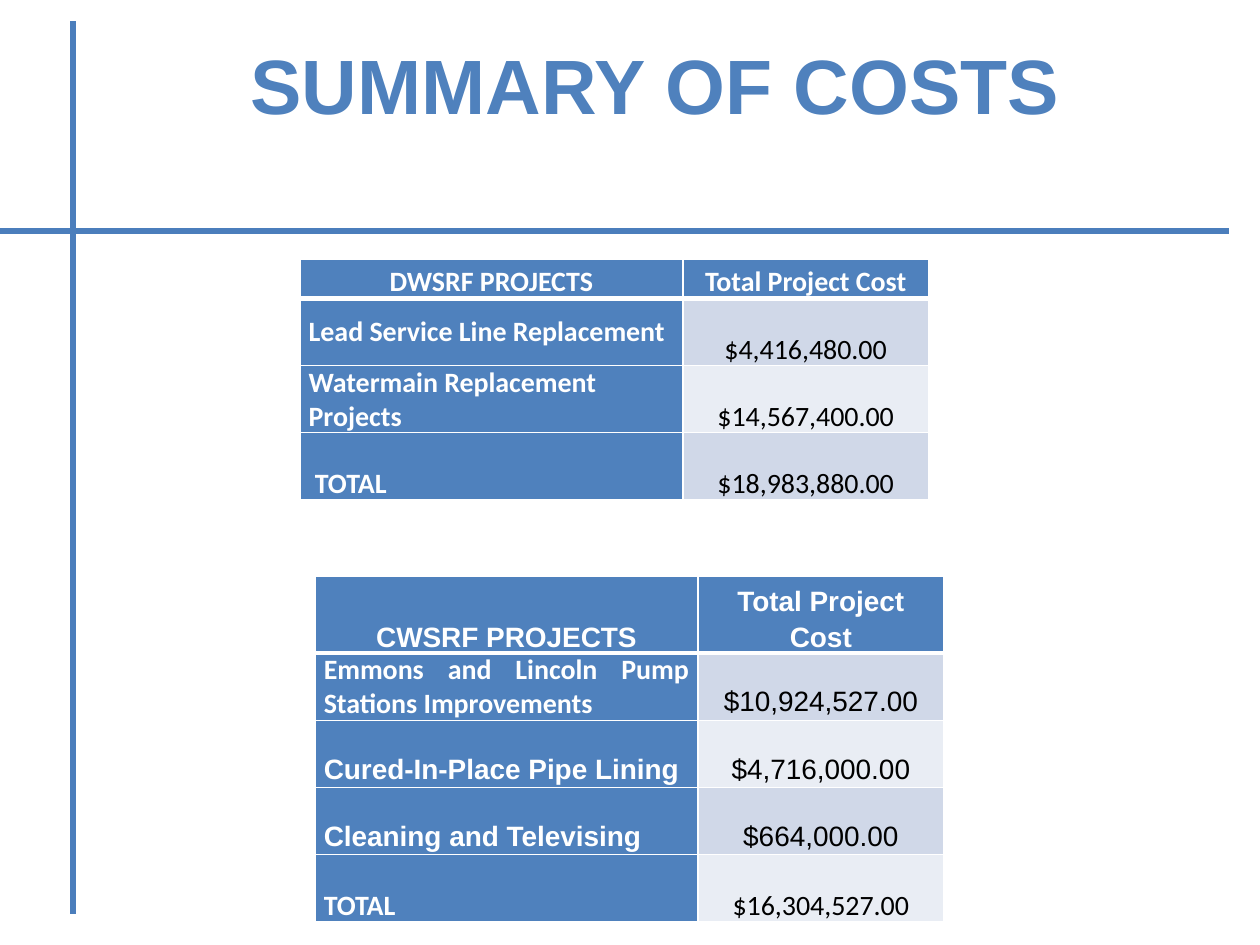
from dataclasses import dataclass

from lxml import etree
from pptx import Presentation
from pptx import util as u
from pptx.dml import color
from pptx.enum import shapes, text
from pptx.oxml import ns


@dataclass(frozen=True)
class Theme:
    accent: str = "4F81BD"
    rule: str = "4B7EBC"
    white: str = "FFFFFF"
    black: str = "000000"
    bands: tuple = ("D0D8E8", "E9EDF4")
    heading: str = "Arial"
    body: str = "Calibri"
    title_size: float = 44
    table_size: float = 16
    rule_width: float = 3.5


THEME = Theme()
LEFT, CENTER, JUSTIFY = text.PP_ALIGN.LEFT, text.PP_ALIGN.CENTER, text.PP_ALIGN.JUSTIFY


def write_text(frame, content, *, font, size=THEME.table_size, fill=THEME.white,
               bold=True, align=CENTER, spacing=1.0):
    paragraph = frame.paragraphs[0]
    paragraph.alignment = align
    paragraph.line_spacing = spacing
    run = paragraph.add_run()
    run.text = content
    run.font.name = font
    run.font.size = u.Pt(size)
    run.font.bold = bold
    run.font.color.rgb = color.RGBColor.from_string(fill)


def add_rule(slide, start, end):
    points = [u.Inches(value) for value in (*start, *end)]
    connector = slide.shapes.add_connector(shapes.MSO_CONNECTOR.STRAIGHT, *points)
    connector.line.width = u.Pt(THEME.rule_width)
    connector.line.color.rgb = color.RGBColor.from_string(THEME.rule)
    etree.SubElement(connector._element.spPr, ns.qn("a:effectLst"))


def add_title(slide, box, content):
    shape = slide.shapes.add_textbox(*map(u.Inches, box))
    shape.text_frame.word_wrap = False
    shape.text_frame.auto_size = text.MSO_AUTO_SIZE.SHAPE_TO_FIT_TEXT
    write_text(shape.text_frame, content, font=THEME.heading,
               size=THEME.title_size, fill=THEME.accent)


def set_borders(cell, bottom_width):
    properties = cell._tc.get_or_add_tcPr()
    widths = {"lnL": 1, "lnR": 1, "lnT": 1, "lnB": bottom_width}
    for position, (side, width) in enumerate(widths.items()):
        line = etree.Element(ns.qn(f"a:{side}"), w=str(u.Pt(width)))
        fill = etree.SubElement(line, ns.qn("a:solidFill"))
        etree.SubElement(fill, ns.qn("a:srgbClr"), val=THEME.white)
        properties.insert(position, line)


def format_cell(cell, fill, anchor, bottom_width=1):
    cell.margin_left = cell.margin_right = u.Inches(0.07)
    cell.margin_top = cell.margin_bottom = 0
    cell.vertical_anchor = anchor
    cell.fill.solid()
    cell.fill.fore_color.rgb = color.RGBColor.from_string(fill)
    set_borders(cell, bottom_width)


def add_cost_table(slide, box, header_height, header, header_font, projects):
    left, top, width, height = box
    row_height = (height - header_height) / len(projects)
    frame = slide.shapes.add_table(len(projects) + 1, 2, *map(u.Inches, box))
    table = frame.table
    table.columns[0].width = u.Inches(3.04)
    table.columns[1].width = u.Inches(width - 3.04)
    table.rows[0].height = u.Inches(header_height)

    for cell, label in zip(table.rows[0].cells, header):
        format_cell(cell, THEME.accent, text.MSO_ANCHOR.BOTTOM, bottom_width=3)
        write_text(cell.text_frame, label, font=header_font, spacing=1.15)

    for index, (name, cost, name_font, cost_font, align, spacing) in enumerate(projects):
        row = table.rows[index + 1]
        row.height = u.Inches(row_height)
        name_cell, cost_cell = row.cells
        format_cell(name_cell, THEME.accent, text.MSO_ANCHOR.MIDDLE)
        write_text(name_cell.text_frame, name, font=name_font, align=align, spacing=spacing)
        format_cell(cost_cell, THEME.bands[index % 2], text.MSO_ANCHOR.MIDDLE)
        write_text(cost_cell.text_frame, cost, font=cost_font, fill=THEME.black,
                   bold=False, spacing=2.0)


def build_costs_slide(presentation):
    slide = presentation.slides.add_slide(presentation.slide_layouts[6])
    add_rule(slide, (0.58, 0.17), (0.58, 7.25))
    add_rule(slide, (0, 1.83), (9.75, 1.83))
    add_title(slide, (1.86, 0.25, 6.68, 0.84), "SUMMARY OF COSTS")

    body, heading = THEME.body, THEME.heading
    add_cost_table(
        slide, (2.38, 2.06, 4.99, 1.89), 0.3,
        ("DWSRF PROJECTS", "Total Project Cost"), body,
        [
            ("Lead Service Line Replacement", "$4,416,480.00", body, body, LEFT, 1.0),
            ("Watermain Replacement Projects", "$14,567,400.00", body, body, LEFT, 1.0),
            (" TOTAL", "$18,983,880.00", body, body, JUSTIFY, 2.0),
        ],
    )
    add_cost_table(
        slide, (2.5, 4.57, 4.99, 2.73), 0.61,
        ("CWSRF PROJECTS", "Total Project Cost"), heading,
        [
            ("Emmons and Lincoln Pump Stations Improvements", "$10,924,527.00",
             body, heading, JUSTIFY, 1.0),
            ("Cured-In-Place Pipe Lining", "$4,716,000.00", heading, heading, JUSTIFY, 2.0),
            ("Cleaning and Televising", "$664,000.00", heading, heading, JUSTIFY, 2.0),
            ("TOTAL", "$16,304,527.00", body, body, JUSTIFY, 2.0),
        ],
    )


def main():
    presentation = Presentation()
    presentation.slide_width = u.Inches(10)
    presentation.slide_height = u.Inches(7.5)
    build_costs_slide(presentation)
    presentation.save("out.pptx")


if __name__ == "__main__":
    main()
